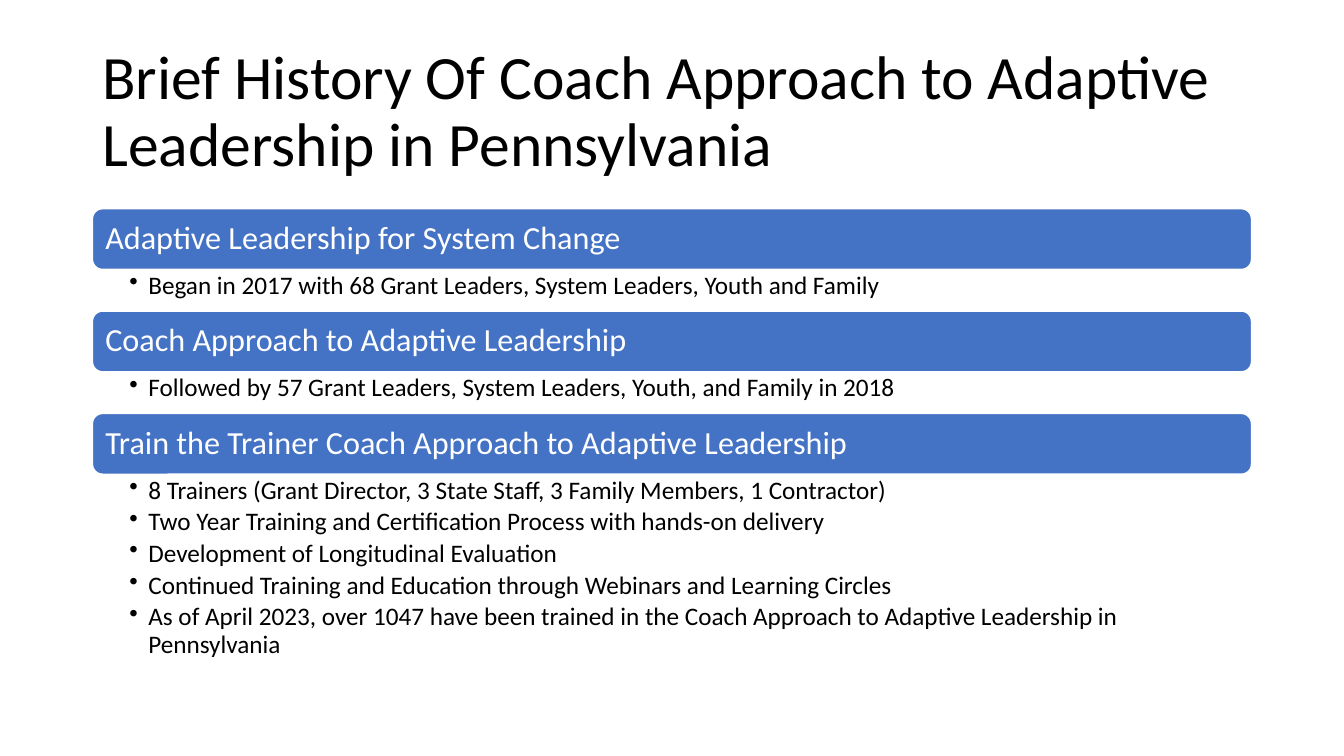
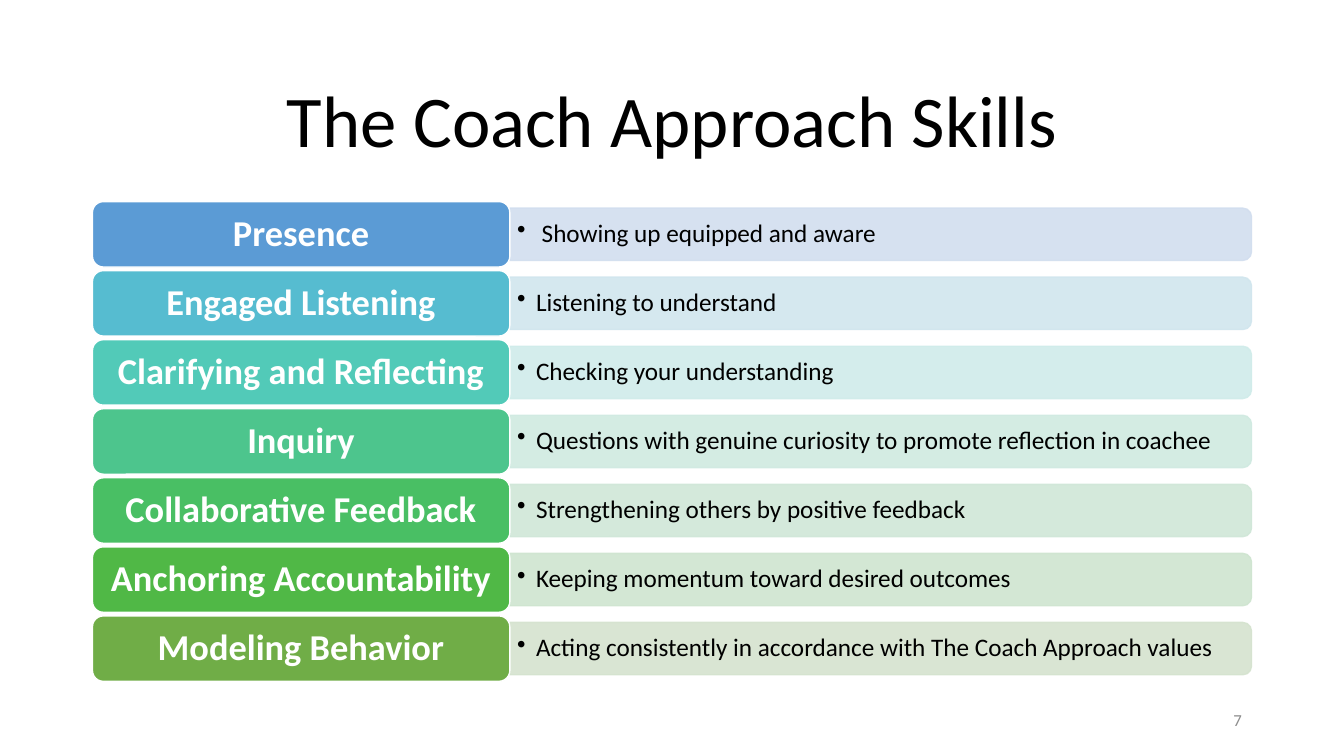
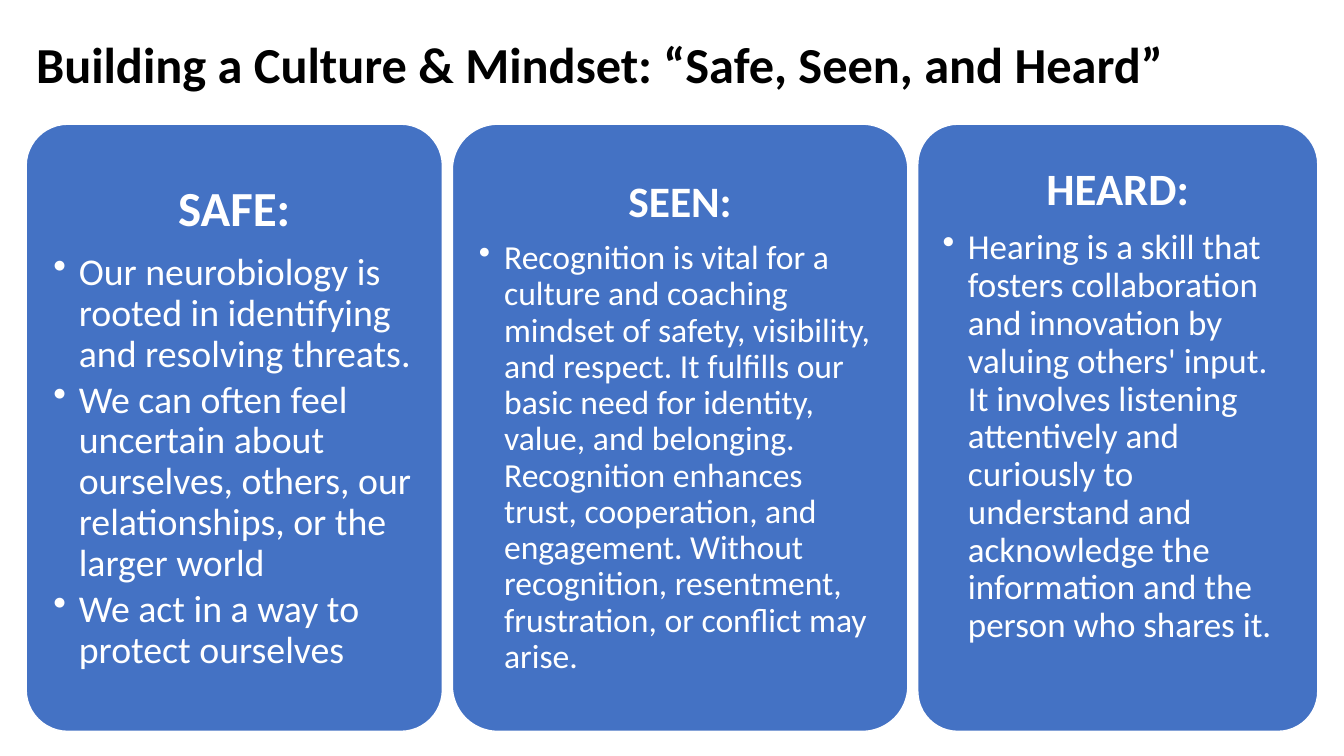
import dataclasses

import pptx
import pptx.dml.color
import pptx.enum.shapes
import pptx.enum.text
import pptx.oxml.ns
import pptx.util
from lxml import etree

Cm = pptx.util.Cm
Pt = pptx.util.Pt
Align = pptx.enum.text.PP_ALIGN
Anchor = pptx.enum.text.MSO_ANCHOR
Preset = pptx.enum.shapes.MSO_SHAPE
qn = pptx.oxml.ns.qn


@dataclasses.dataclass(frozen=True)
class Theme:
    font: str = "Calibri"
    dark: str = "000000"
    light: str = "FFFFFF"
    accent: str = "4472C4"
    muted: str = "8C8C8C"
    title: int = 44
    title_large: int = 52
    title_small: int = 36
    section: int = 23
    skill: int = 26
    body: int = 18
    footer: int = 12
    line_spacing: float = 0.9
    heading_gap: float = 0.32  # space after, as a share of the type size
    bullet_gap: float = 0.18
    tight_gap: float = 0.135


class Deck:
    """Holds the theme and the slide being drawn; lengths are centimetres."""

    def __init__(self, theme):
        self.theme = theme
        self.presentation = pptx.Presentation()
        self.presentation.slide_width = Cm(33.87)
        self.presentation.slide_height = Cm(19.05)
        self.slide = None

    def new_slide(self):
        self.slide = self.presentation.slides.add_slide(self.presentation.slide_layouts[6])

    def frame(self, shape, insets, anchor=Anchor.MIDDLE):
        frame = shape.text_frame
        frame.word_wrap = True
        frame.vertical_anchor = anchor
        (frame.margin_left, frame.margin_top,
         frame.margin_right, frame.margin_bottom) = [Cm(inset) for inset in insets]
        return frame

    def text_box(self, box, insets=(0.25, 0.13, 0.25, 0.13), anchor=Anchor.MIDDLE):
        shape = self.slide.shapes.add_textbox(*[Cm(length) for length in box])
        return self.frame(shape, insets, anchor)

    def shape(self, preset, box, color, line, alpha=None):
        shape = self.slide.shapes.add_shape(preset, *[Cm(length) for length in box])
        shape.shadow.inherit = False
        shape.line.width = Pt(1)
        for fill, value in ((shape.fill, color), (shape.line.fill, line)):
            fill.solid()
            fill.fore_color.rgb = pptx.dml.color.RGBColor.from_string(value)
        if alpha:
            for color_element in shape.element.spPr.iter(qn("a:srgbClr")):
                etree.SubElement(color_element, qn("a:alpha"), val=str(alpha * 1000))
        return shape

    def paragraph(self, frame, text, size, color, align=Align.LEFT, bold=False, gap=0):
        paragraph = frame.paragraphs[0]
        if paragraph.runs:
            paragraph = frame.add_paragraph()
        paragraph.text = text
        paragraph.alignment = align
        paragraph.line_spacing = self.theme.line_spacing
        paragraph.space_after = Pt(round(size * gap, 1))
        paragraph.font.name = self.theme.font
        paragraph.font.size = Pt(size)
        paragraph.font.bold = bold
        paragraph.font.color.rgb = pptx.dml.color.RGBColor.from_string(color)
        return paragraph

    def bullet(self, frame, text, size, color, indent, gap):
        paragraph = self.paragraph(frame, text, size, color, gap=gap)
        properties = paragraph._p.get_or_add_pPr()
        properties.set("marL", str(Cm(indent)))
        properties.set("indent", str(-Cm(indent)))
        mark = etree.Element(qn("a:buChar"), char="•")
        defaults = properties.find(qn("a:defRPr"))
        if defaults is None:
            properties.append(mark)
        else:
            defaults.addprevious(mark)

    def title(self, text, box, size, align=Align.LEFT, bold=False):
        self.paragraph(self.text_box(box), text, size, self.theme.dark, align, bold)

    def page_number(self, number):
        frame = self.text_box((23.93, 17.65, 7.62, 1.02))
        self.paragraph(frame, number, self.theme.footer, self.theme.muted, Align.RIGHT)

    def section(self, top, heading, bullets, body_height):
        """Draws a heading bar with bullets below it and returns the bottom edge."""
        theme, left, width, bar_height = self.theme, 2.33, 29.21, 1.53
        bar = self.shape(Preset.ROUNDED_RECTANGLE, (left, top, width, bar_height),
                         theme.accent, theme.light)
        self.paragraph(self.frame(bar, [0.25] * 4), heading, theme.section, theme.light)
        frame = self.text_box((left, top + bar_height, width, body_height),
                              (0.93, 0.08, 0.46, 0.08), Anchor.TOP)
        for text in bullets:
            self.bullet(frame, text, theme.body, theme.dark, 0.48, theme.bullet_gap)
        return top + bar_height + body_height

    def skill(self, top, name, meaning, color, tint):
        theme, left, width, height = self.theme, 2.33, 10.52, 1.65
        middle = top + height / 2
        # The band is drawn upright and turned so that its round corners face right
        band_left, band_length, band_height = left + width, 18.69, 1.32
        band = self.shape(Preset.ROUND_2_SAME_RECTANGLE,
                          (band_left + (band_length - band_height) / 2,
                           middle - band_length / 2, band_height, band_length),
                          tint, tint, alpha=90)
        band.rotation = 90
        frame = self.text_box((band_left, middle - 0.6, 18.62, 1.2), (0.18, 0.1, 0.18, 0.1))
        self.bullet(frame, meaning, theme.body, theme.dark, 0.48, 0)
        label = self.shape(Preset.ROUNDED_RECTANGLE, (left, top, width, height),
                           color, theme.light)
        self.paragraph(self.frame(label, (0.28, 0.13, 0.28, 0.13)), name, theme.skill,
                       theme.light, Align.CENTER, bold=True)

    def card(self, left, width, heading, bullets, sizes, inset, lift):
        theme = self.theme
        card = self.shape(Preset.ROUNDED_RECTANGLE, (left, 3.13, width, 15.3),
                          theme.accent, theme.light)
        card.adjustments[0] = 0.1
        frame = self.frame(card, (inset, inset, inset, inset + lift))
        heading_size, bullet_size = sizes
        self.paragraph(frame, heading, heading_size, theme.light, Align.CENTER, True,
                       theme.heading_gap)
        for text in bullets:
            self.bullet(frame, text, bullet_size, theme.light, 0.64, theme.tight_gap)


# Heading, bullets, height of the bullet area
SECTIONS = [
    ("Adaptive Leadership for System Change",
     ["Began in 2017 with 68 Grant Leaders, System Leaders, Youth and Family"], 1.05),
    ("Coach Approach to Adaptive Leadership",
     ["Followed by 57 Grant Leaders, System Leaders, Youth, and Family in 2018"], 1.05),
    ("Train the Trainer Coach Approach to Adaptive Leadership",
     ["8 Trainers (Grant Director, 3 State Staff, 3 Family Members, 1 Contractor)",
      "Two Year Training and Certification Process with hands-on delivery",
      "Development of Longitudinal Evaluation",
      "Continued Training and Education through Webinars and Learning Circles",
      "As of April 2023, over 1047 have been trained in the Coach Approach to "
      "Adaptive Leadership in Pennsylvania"], 5.03),
]

# Name, meaning, label color, band color
SKILLS = [
    ("Presence", " Showing up equipped and aware", "5B9BD5", "D2DEEF"),
    ("Engaged Listening", "Listening to understand", "56BCD0", "D1E6EE"),
    ("Clarifying and Reflecting", "Checking your understanding", "52CAB8", "D0ECEA"),
    ("Inquiry", "Questions with genuine curiosity to promote reflection in coachee",
     "4DC58D", "D0EAE1"),
    ("Collaborative Feedback", "Strengthening others by positive feedback",
     "49BF64", "D0E7D8"),
    ("Anchoring Accountability", "Keeping momentum toward desired outcomes",
     "50B846", "CFE5D0"),
    ("Modeling Behavior", "Acting consistently in accordance with The Coach Approach values",
     "70AD47", "D5E3CF"),
]

# Width, heading, bullets, type sizes, inset, extra bottom inset
CARDS = [
    (10.49, "SAFE:",
     ["Our neurobiology is rooted in identifying and resolving threats.",
      "We can often feel uncertain about ourselves, others, our relationships, "
      "or the larger world",
      "We act in a way to protect ourselves"], (35, 27), 0.38, 0),
    (11.48, "SEEN:",
     ["Recognition is vital for a culture and coaching mindset of safety, visibility, "
      "and respect. It fulfills our basic need for identity, value, and belonging. "
      "Recognition enhances trust, cooperation, and engagement. Without recognition, "
      "resentment, frustration, or conflict may arise."], (31, 24), 0.33, 0),
    (10.08, "HEARD:",
     ["Hearing is a skill that fosters collaboration and innovation by valuing others' "
      "input. It involves listening attentively and curiously to understand and "
      "acknowledge the information and the person who shares it."], (32, 25), 0.33, 1.09),
]


def main():
    theme = Theme()
    deck = Deck(theme)

    # History
    deck.new_slide()
    deck.title("Brief History Of Coach Approach to Adaptive Leadership in Pennsylvania",
               (2.33, 1.01, 29.21, 3.68), theme.title)
    top = 5.26
    for heading, bullets, body_height in SECTIONS:
        top = deck.section(top, heading, bullets, body_height)

    # Skills
    deck.new_slide()
    deck.title("The Coach Approach Skills", (2.33, 1.55, 29.21, 3.15),
               theme.title_large, Align.CENTER)
    for row, skill in enumerate(SKILLS):
        deck.skill(5.08 + row * 1.74, *skill)
    deck.page_number("7")

    # Culture and mindset
    deck.new_slide()
    deck.title("Building a Culture & Mindset: “Safe, Seen, and Heard”",
               (0.66, 1.01, 32.94, 1.35), theme.title_small, bold=True)
    left, gap = 0.66, 0.25
    for width, *content in CARDS:
        deck.card(left, width, *content)
        left += width + gap

    deck.presentation.save("out.pptx")


if __name__ == "__main__":
    main()
